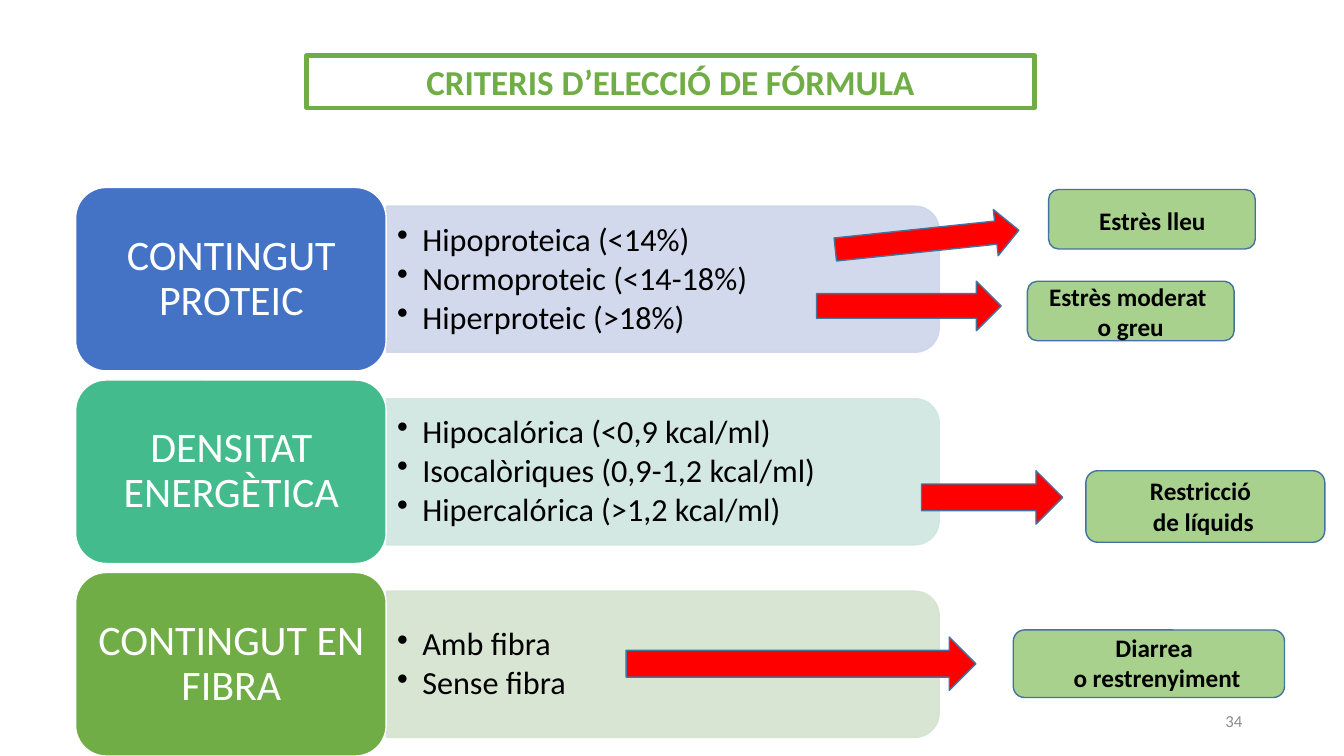
"""Build the slide on criteria for choosing a nutrition formula."""
from dataclasses import dataclass

from lxml.etree import SubElement
from pptx import Presentation
from pptx.dml.color import RGBColor
from pptx.enum.shapes import MSO_SHAPE
from pptx.enum.text import MSO_ANCHOR, PP_ALIGN
from pptx.oxml.ns import qn
from pptx.shapes.autoshape import Shape
from pptx.slide import Slide
from pptx.util import Inches, Pt

Box = tuple[float, float, float, float]

COLORS = {
    "blue": "4472C4", "pale_blue": "CFD5EA",
    "teal": "43BB8D", "pale_teal": "CFE6E0",
    "green": "70AD47", "pale_green": "D5E3CF",
    "outcome": "A9D18E", "outline": "43739E", "arrow": "FF0000",
    "white": "FFFFFF", "black": "000000", "gray": "8C8C8C",
}
FIRST_ROW, ROW_PITCH = 1.86, 1.91


@dataclass
class Criterion:
    heading: str
    options: list[str]
    color: str
    pale: str


@dataclass
class Outcome:
    text: str
    box: Box
    label: Box
    arrow: Box
    rotation: float = 0


CRITERIA = [
    Criterion("CONTINGUT PROTEIC",
              ["Hipoproteica (<14%)", "Normoproteic (<14-18%)", "Hiperproteic (>18%)"],
              "blue", "pale_blue"),
    Criterion("DENSITAT ENERGÈTICA",
              ["Hipocalórica (<0,9 kcal/ml)", "Isocalòriques (0,9-1,2 kcal/ml)",
               "Hipercalórica (>1,2 kcal/ml)"],
              "teal", "pale_teal"),
    Criterion("CONTINGUT EN FIBRA", ["Amb fibra", "Sense fibra"], "green", "pale_green"),
]
OUTCOMES = [
    Outcome("Estrès lleu", (10.4, 1.88, 2.05, 0.59), (9.98, 1.99, 2.9, 0.4),
            (8.28, 2.15, 1.83, 0.46), 354),
    Outcome("Estrès moderat \no greu", (10.19, 2.79, 2.05, 0.59), (10.05, 2.74, 2.33, 0.71),
            (8.1, 2.79, 1.83, 0.49)),
    Outcome("Restricció \nde líquids", (10.77, 4.67, 2.37, 0.71), (11, 4.67, 1.87, 0.71),
            (9.14, 4.67, 1.4, 0.53)),
    Outcome("Diarrea \no restrenyiment", (10.05, 6.25, 2.69, 0.67), (10.54, 6.22, 1.87, 0.71),
            (6.21, 6.32, 3.47, 0.53)),
]


def rgb(name: str) -> RGBColor:
    return RGBColor.from_string(COLORS[name])


def draw(slide: Slide, kind: MSO_SHAPE, box: Box, fill: str | None, line: str,
         width: float = 1, rotation: float = 0, opacity: int = 100) -> Shape:
    shape = slide.shapes.add_shape(kind, *map(Inches, box))
    shape.shadow.inherit = False
    shape.rotation = rotation
    if fill:
        shape.fill.solid()
        shape.fill.fore_color.rgb = rgb(fill)
    else:
        shape.fill.background()
    shape.line.color.rgb = rgb(line)
    shape.line.width = Pt(width)
    if opacity < 100:
        for color in shape.fill._xPr.iter(qn("a:srgbClr")):
            SubElement(color, qn("a:alpha"), val=str(opacity * 1000))
    return shape


def write(holder: Shape, paragraphs: list[str], *, size: float, color: str,
          bold: bool = False, align: PP_ALIGN = PP_ALIGN.CENTER,
          anchor: MSO_ANCHOR = MSO_ANCHOR.TOP, spacing: float = 1,
          after: float = 0, inset: float = 0.1, bullet: bool = False) -> None:
    frame = holder.text_frame
    frame.word_wrap = True
    frame.vertical_anchor = anchor
    frame.margin_left = frame.margin_right = Inches(inset)
    frame.margin_top = frame.margin_bottom = Inches(inset / 2)
    for index, text in enumerate(paragraphs):
        paragraph = frame.add_paragraph() if index else frame.paragraphs[0]
        paragraph.text = text
        paragraph.alignment = align
        paragraph.line_spacing = spacing
        paragraph.space_after = Pt(after)
        for run in paragraph.runs:
            run.font.name = "Calibri"
            run.font.size = Pt(size)
            run.font.bold = bold
            run.font.color.rgb = rgb(color)
        if bullet:
            paragraph.level = 1
            properties = paragraph._p.get_or_add_pPr()
            properties.set("marL", str(Inches(0.25)))
            properties.set("indent", str(Inches(-0.25)))
            SubElement(properties, qn("a:buChar"), char="•")


def add_label(slide: Slide, box: Box, paragraphs: list[str], **text_format) -> None:
    write(slide.shapes.add_textbox(*map(Inches, box)), paragraphs, **text_format)


def add_criterion(slide: Slide, criterion: Criterion, top: float) -> None:
    draw(slide, MSO_SHAPE.ROUND_2_SAME_RECTANGLE, (5.85, top - 1.83, 1.45, 5.48),
         criterion.pale, criterion.pale, rotation=90, opacity=90)
    add_label(slide, (3.84, top + 0.26, 5.41, 1.31), criterion.options, size=23,
              color="black", align=PP_ALIGN.LEFT, anchor=MSO_ANCHOR.MIDDLE,
              spacing=0.9, after=3, bullet=True)
    draw(slide, MSO_SHAPE.ROUNDED_RECTANGLE, (0.75, top, 3.08, 1.82),
         criterion.color, "white")
    add_label(slide, (0.84, top + 0.09, 2.91, 1.64), [criterion.heading], size=30,
              color="white", anchor=MSO_ANCHOR.MIDDLE, spacing=0.9, inset=0.12)


def add_outcome(slide: Slide, outcome: Outcome) -> None:
    draw(slide, MSO_SHAPE.RIGHT_ARROW, outcome.arrow, "arrow", "outline",
         rotation=outcome.rotation)
    draw(slide, MSO_SHAPE.ROUNDED_RECTANGLE, outcome.box, "outcome", "outline")
    add_label(slide, outcome.label, [outcome.text], size=18, color="black", bold=True)


def main() -> None:
    deck = Presentation()
    deck.slide_width, deck.slide_height = Inches(13.33), Inches(7.5)
    slide = deck.slides.add_slide(deck.slide_layouts[6])
    for row, criterion in enumerate(CRITERIA):
        add_criterion(slide, criterion, FIRST_ROW + row * ROW_PITCH)
    for outcome in OUTCOMES:
        add_outcome(slide, outcome)
    title = draw(slide, MSO_SHAPE.RECTANGLE, (3.04, 0.55, 7.22, 0.52), None, "green", width=3)
    write(title, ["CRITERIS D’ELECCIÓ DE FÓRMULA"], size=25, color="green", bold=True)
    add_label(slide, (9.42, 6.95, 3, 0.4), ["34"], size=12, color="gray",
              align=PP_ALIGN.RIGHT, anchor=MSO_ANCHOR.MIDDLE)
    deck.save("out.pptx")


if __name__ == "__main__":
    main()
